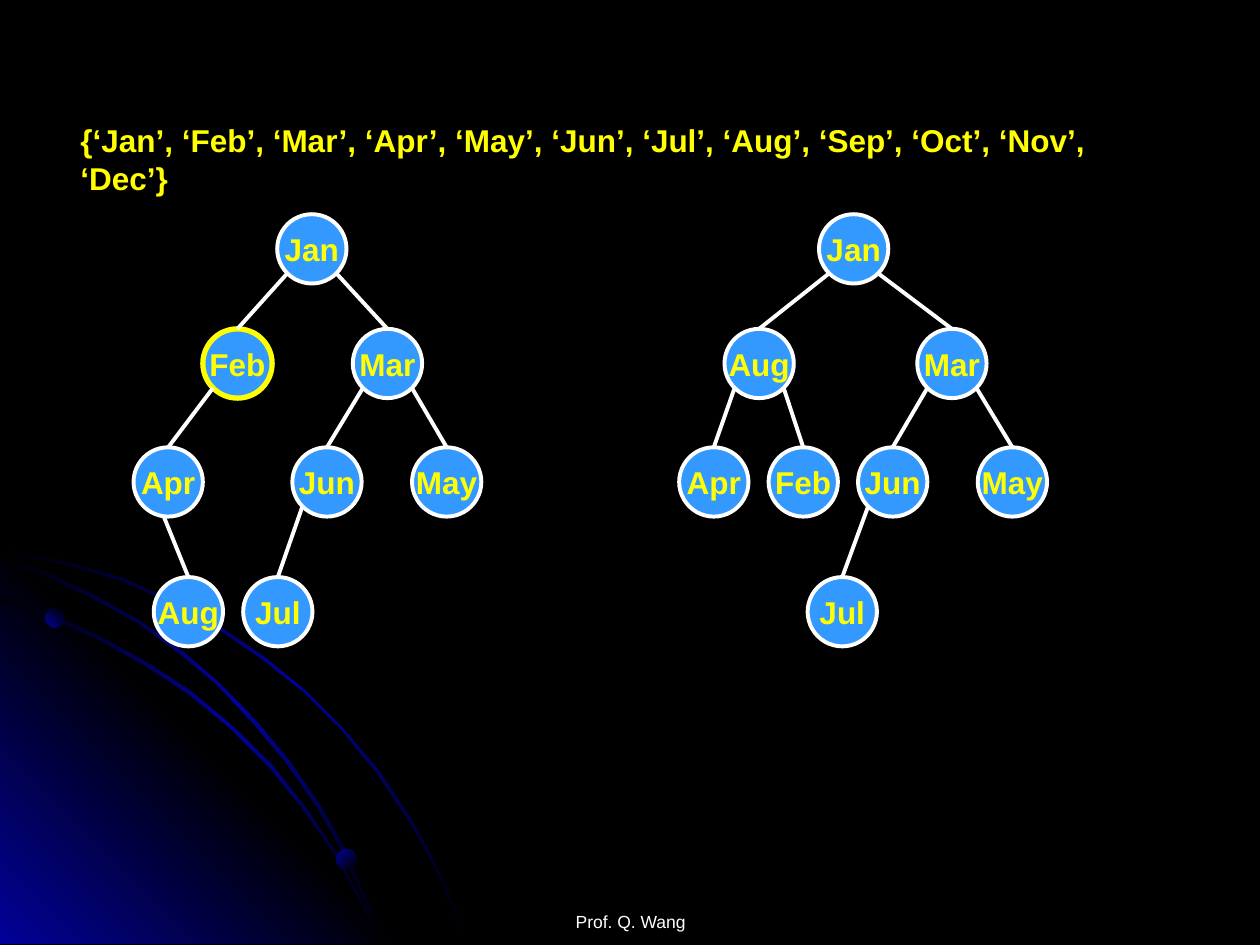
from dataclasses import dataclass
from typing import Optional

from pptx import Presentation
from pptx.dml.color import RGBColor
from pptx.enum.shapes import MSO_CONNECTOR, MSO_SHAPE
from pptx.enum.text import MSO_ANCHOR, PP_ALIGN
from pptx.oxml import parse_xml
from pptx.oxml.ns import nsdecls, qn
from pptx.util import Inches, Pt

BLACK, NAVY, BLUE = "000000", "010199", "3399FF"
WHITE, YELLOW = "FFFFFF", "FFFF00"

DIAMETER = 0.55
INSET = 0.08  # from the box of a node to its lower left and right edge points
LEVEL_TOPS = [1.7, 2.61, 3.55, 4.58]


@dataclass
class Node:
    label: str
    x: float
    level: int
    parent: Optional[str] = None
    outline: str = WHITE
    outline_pt: float = 2.25
    exit_below: bool = False  # the edge to the child leaves from the bottom

    @property
    def y(self) -> float:
        return LEVEL_TOPS[self.level]


@dataclass
class Orb:
    x: float
    y: float
    size: float
    angle: int


BEFORE = [
    Node("Jan", 2.2, 0),
    Node("Feb", 1.61, 1, "Jan", YELLOW, 3),
    Node("Mar", 2.8, 1, "Jan"),
    Node("Apr", 1.06, 2, "Feb", exit_below=True),
    Node("May", 3.27, 2, "Mar"),
    Node("Jun", 2.32, 2, "Mar"),
    Node("Jul", 1.93, 3, "Jun"),
    Node("Aug", 1.22, 3, "Apr"),
]
AFTER = [
    Node("Jan", 6.5, 0),
    Node("Aug", 5.75, 1, "Jan"),
    Node("Mar", 7.28, 1, "Jan"),
    Node("Apr", 5.39, 2, "Aug"),
    Node("Feb", 6.1, 2, "Aug"),
    Node("Jun", 6.81, 2, "Mar"),
    Node("May", 7.76, 2, "Mar"),
    Node("Jul", 6.41, 3, "Jun"),
]

OUTER_ARC = [
    (0.57, 4.47), (0, 4.35), (0, 4.38), (0.56, 4.49), (0.97, 4.61), (1.35, 4.78),
    (1.73, 4.99), (2.08, 5.23), (2.41, 5.49), (2.71, 5.79), (2.98, 6.12), (3.23, 6.49),
    (3.37, 6.73), (3.5, 6.98), (3.6, 7.23), (3.7, 7.49), (3.72, 7.49), (3.62, 7.23),
    (3.52, 6.98), (3.39, 6.73), (3.25, 6.48), (3, 6.11), (2.72, 5.78), (2.42, 5.48),
    (2.09, 5.21), (1.74, 4.97), (1.36, 4.77), (0.98, 4.59),
]
INNER_ARC = [
    (2.85, 7.14), (2.94, 7.32), (3.01, 7.49), (3.03, 7.49), (2.96, 7.3), (2.86, 7.12),
    (2.66, 6.76), (2.42, 6.4), (2.15, 6.06), (1.84, 5.76), (1.52, 5.49), (1.17, 5.26),
    (0.79, 5.05), (0.41, 4.88), (0, 4.75), (0, 4.77), (0.39, 4.9), (0.77, 5.07),
    (1.15, 5.28), (1.5, 5.51), (1.83, 5.78), (2.13, 6.08), (2.4, 6.41), (2.65, 6.77),
]
MIDDLE_ARC = [
    (0, 4.42), (0, 4.44), (0.36, 4.57), (0.74, 4.75), (1.09, 4.94), (1.42, 5.18),
    (1.73, 5.44), (2.02, 5.75), (2.27, 6.05), (2.52, 6.41), (2.67, 6.67), (2.8, 6.94),
    (2.92, 7.22), (3.01, 7.49), (3.03, 7.49), (2.94, 7.2), (2.82, 6.93), (2.69, 6.65),
    (2.54, 6.39), (2.29, 6.03), (2.04, 5.73), (1.75, 5.43), (1.44, 5.16), (1.11, 4.93),
    (0.76, 4.73), (0.39, 4.55),
]
CORNER = [(3.22, 7.49), (0, 7.49), (0, 4.27)]
ORBS = [Orb(0.36, 4.83, 0.15, 315), Orb(2.67, 6.74, 0.16, 45)]


def color(hex_code: str) -> RGBColor:
    return RGBColor.from_string(hex_code)


def fill_gradient(shape, colors: list[str], angle: int) -> None:
    """Fill with evenly spaced colours; the angle runs clockwise."""
    step = 100000 // (len(colors) - 1)
    stops = "".join(
        f'<a:gs pos="{i * step}"><a:srgbClr val="{c}"/></a:gs>' for i, c in enumerate(colors)
    )
    shape.fill.background()
    sp_pr = shape._element.spPr
    sp_pr.replace(sp_pr.find(qn("a:noFill")), parse_xml(
        f'<a:gradFill {nsdecls("a")} rotWithShape="1"><a:gsLst>{stops}</a:gsLst>'
        f'<a:lin ang="{angle * 60000}" scaled="1"/></a:gradFill>'
    ))
    shape.line.fill.background()
    shape.shadow.inherit = False


def add_outline(s, points: list[tuple], colors: list[str], angle: int) -> None:
    start, *rest = [(Inches(x), Inches(y)) for x, y in points]
    builder = s.shapes.build_freeform(*start)
    builder.add_line_segments(rest, close=True)
    fill_gradient(builder.convert_to_shape(), colors, angle)


def add_background(s) -> None:
    s.background.fill.solid()
    s.background.fill.fore_color.rgb = color(BLACK)
    arc_colors = [BLACK, NAVY, BLACK]
    add_outline(s, OUTER_ARC, arc_colors, 45)
    add_outline(s, CORNER, [NAVY, BLACK, NAVY], 315)
    for arc in (INNER_ARC, MIDDLE_ARC):
        add_outline(s, arc, arc_colors, 45)
    for orb in ORBS:
        sp = s.shapes.add_shape(MSO_SHAPE.OVAL, Inches(orb.x), Inches(orb.y),
                                Inches(orb.size), Inches(orb.size))
        fill_gradient(sp, [NAVY, BLACK], orb.angle)


def write(shape, text: str, size: int, hex_code: str, bold: bool, align: PP_ALIGN) -> None:
    p = shape.text_frame.paragraphs[0]
    p.text = text
    p.alignment = align
    font = p.runs[0].font
    font.name, font.size, font.bold = "Arial", Pt(size), bold
    font.color.rgb = color(hex_code)


def add_node(s, node: Node) -> None:
    sp = s.shapes.add_shape(MSO_SHAPE.OVAL, Inches(node.x), Inches(node.y),
                            Inches(DIAMETER), Inches(DIAMETER))
    sp.shadow.inherit = False
    sp.fill.solid()
    sp.fill.fore_color.rgb = color(BLUE)
    sp.line.color.rgb = color(node.outline)
    sp.line.width = Pt(node.outline_pt)
    sp.text_frame.word_wrap = False
    sp.text_frame.vertical_anchor = MSO_ANCHOR.MIDDLE
    write(sp, node.label, 18, YELLOW, True, PP_ALIGN.CENTER)


def add_edge(s, parent: Node, child: Node) -> None:
    """Join the parent's lower edge to the top of the child."""
    if parent.exit_below:
        dx, dy = 0.24, DIAMETER
    else:
        dx = INSET if child.x < parent.x else DIAMETER - INSET
        dy = DIAMETER - INSET
    line = s.shapes.add_connector(
        MSO_CONNECTOR.STRAIGHT, Inches(parent.x + dx), Inches(parent.y + dy),
        Inches(child.x + DIAMETER / 2), Inches(child.y))
    line.line.color.rgb = color(WHITE)
    line.line.width = Pt(2.25)
    line._element.spPr.append(parse_xml(f'<a:effectLst {nsdecls("a")}/>'))


def add_tree(s, nodes: list[Node]) -> None:
    by_label = {node.label: node for node in nodes}
    for node in nodes:
        add_node(s, node)
        if node.parent:
            add_edge(s, by_label[node.parent], node)


def main() -> None:
    prs = Presentation()
    prs.slide_width, prs.slide_height = Inches(10), Inches(7.5)
    s = prs.slides.add_slide(prs.slide_layouts[6])
    add_background(s)

    footer = s.shapes.add_textbox(Inches(3.42), Inches(6.9), Inches(3.17), Inches(0.5))
    footer.text_frame.word_wrap = True
    footer.text_frame.vertical_anchor = MSO_ANCHOR.BOTTOM
    footer.text_frame.margin_bottom = 0
    write(footer, "Prof. Q. Wang", 10, WHITE, False, PP_ALIGN.CENTER)

    add_tree(s, BEFORE)
    months = s.shapes.add_textbox(Inches(0.54), Inches(0.91), Inches(8.8), Inches(0.4))
    months.text_frame.word_wrap = True
    write(months, "{‘Jan’, ‘Feb’, ‘Mar’, ‘Apr’, ‘May’, ‘Jun’, ‘Jul’, ‘Aug’, ‘Sep’, "
          "‘Oct’, ‘Nov’, ‘Dec’}", 18, YELLOW, True, PP_ALIGN.LEFT)
    add_tree(s, AFTER)
    prs.save("out.pptx")


if __name__ == "__main__":
    main()
